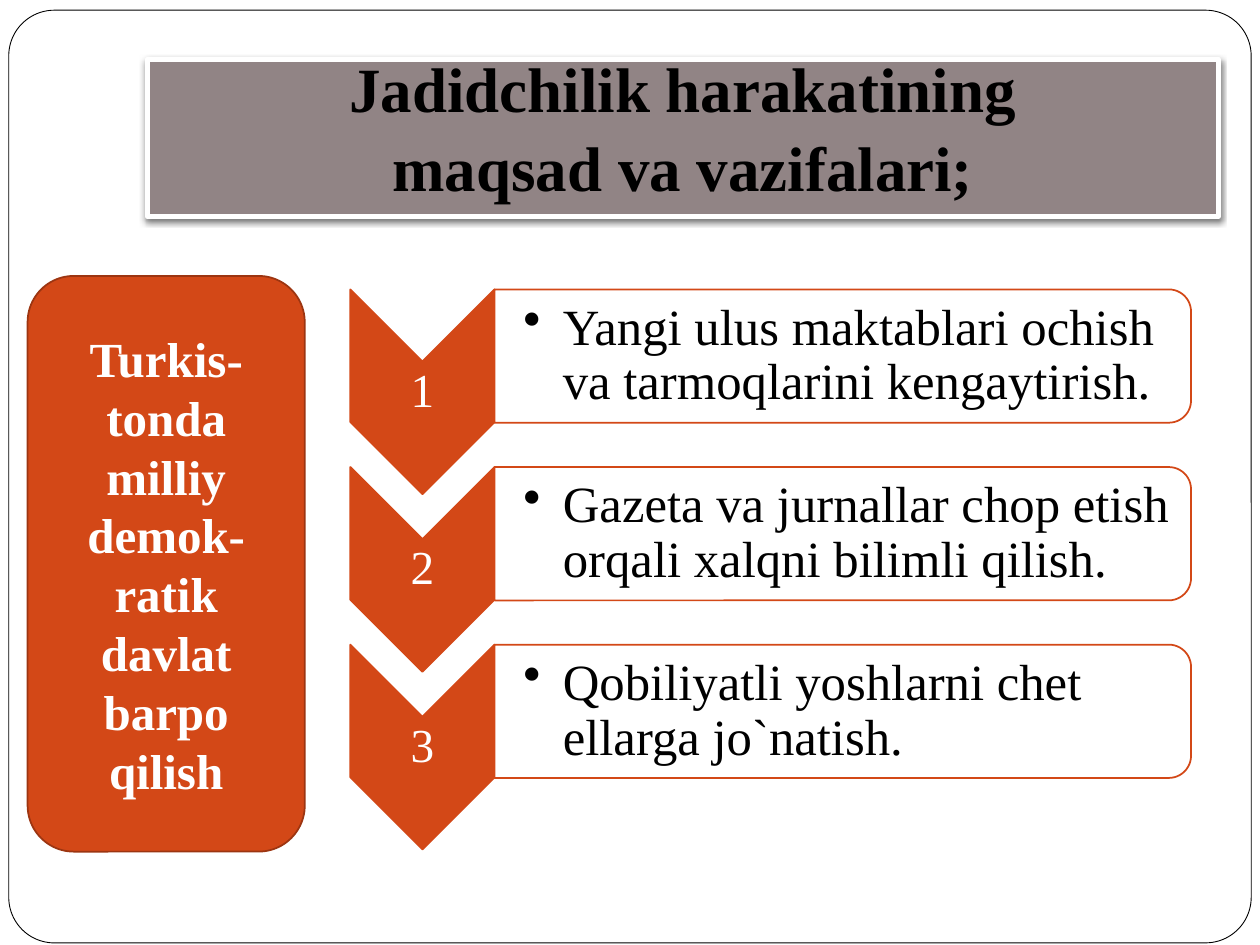
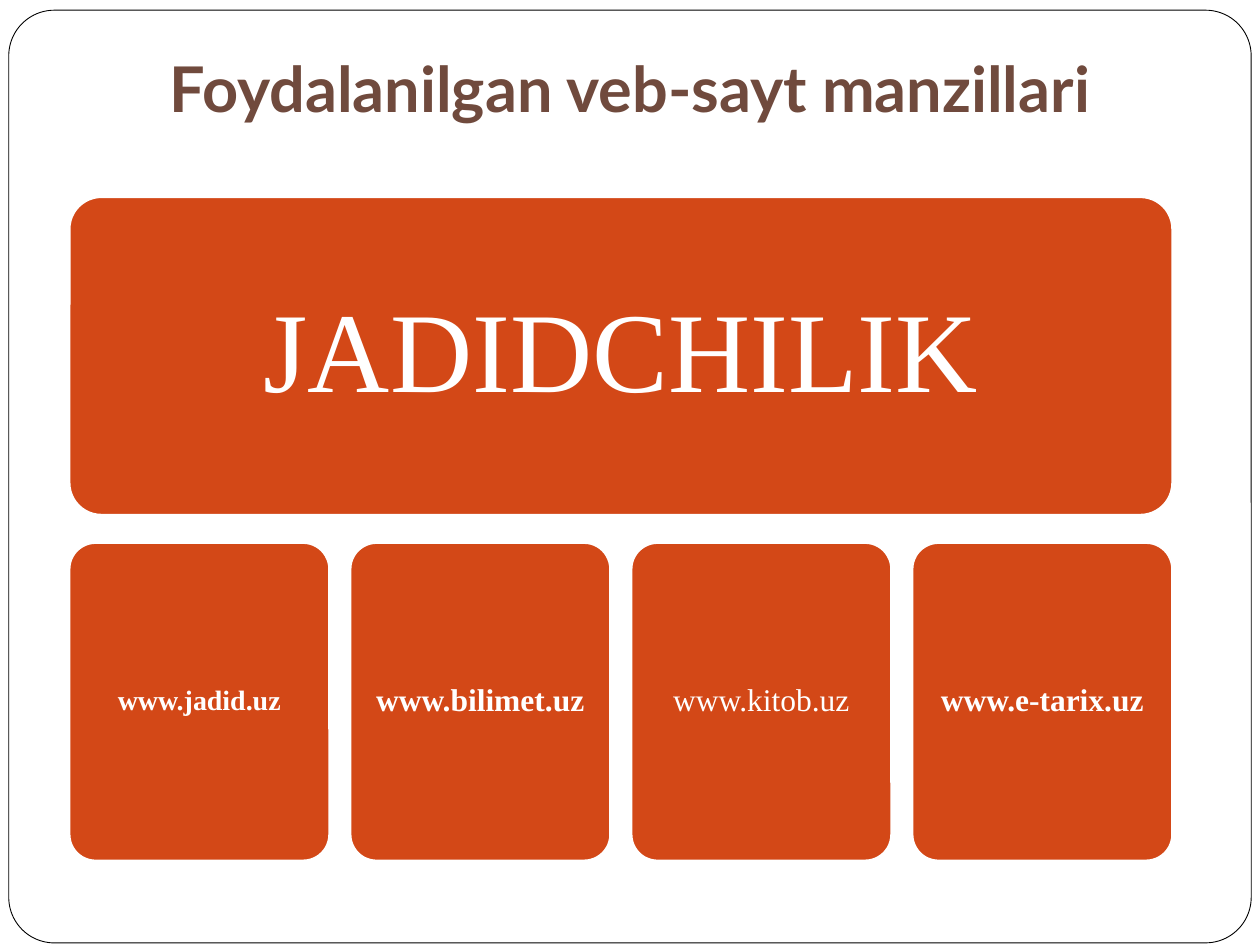
from lxml import etree
from pptx import Presentation
from pptx.dml.color import RGBColor
from pptx.enum import shapes, text
from pptx.oxml import ns
from pptx.util import Pt

# Content
GOALS_TITLE = "Jadidchilik harakatining\vmaqsad va vazifalari;"
MAIN_GOAL = "Turkis-tonda milliy demok-ratik davlat barpo qilish"
TASKS = [
    "Yangi ulus maktablari ochish va tarmoqlarini kengaytirish.",
    "Gazeta va jurnallar chop etish orqali xalqni bilimli qilish.",
    "Qobiliyatli yoshlarni chet ellarga jo`natish.",
]
SITES_TITLE = "Foydalanilgan veb-sayt manzillari"
TOPIC = "JADIDCHILIK"
SITES = [  # address, size, bold
    ("www.jadid.uz", 16, True),
    ("www.bilimet.uz", 18, True),
    ("www.kitob.uz", 18, False),
    ("www.e-tarix.uz", 18, True),
]

# Shared style
ORANGE = RGBColor(0xD3, 0x48, 0x17)
RUST = RGBColor(0x9C, 0x35, 0x11)
BROWN = RGBColor(0x70, 0x4A, 0x3D)
MAUVE = RGBColor(0x91, 0x84, 0x85)
WHITE = RGBColor(255, 255, 255)
BLACK = RGBColor(0, 0, 0)
SERIF, SANS = "Times New Roman", "Lato"
SHAPE, ALIGN, ANCHOR = shapes.MSO_SHAPE, text.PP_ALIGN, text.MSO_ANCHOR


def paint(shape, fill, line, width=1):
    shape.fill.solid()
    shape.fill.fore_color.rgb = fill
    shape.line.color.rgb = line
    shape.line.width = Pt(width)


def add_box(slide, kind, box, fill, line, width=1, corner=None):
    shape = slide.shapes.add_shape(kind, *map(Pt, box))
    shape.shadow.inherit = False
    paint(shape, fill, line, width)
    if corner is not None:
        shape.adjustments[0] = corner
    return shape


def add_turned(slide, kind, box, fill):
    """Add a shape turned a quarter clockwise that fills the given box."""
    left, top, width, height = box
    shift = (width - height) / 2
    turned = add_box(slide, kind, (left + shift, top - shift, height, width), fill, ORANGE)
    turned.rotation = 90


def write(shape, words, size, color, bold=False, font=SERIF, align=ALIGN.CENTER,
          anchor=ANCHOR.MIDDLE, spacing=0.9, margins=(1.5, 1.5, 1.5, 1.5)):
    frame = shape.text_frame
    frame.word_wrap = True
    frame.auto_size = text.MSO_AUTO_SIZE.NONE
    frame.vertical_anchor = anchor
    (frame.margin_left, frame.margin_top,
     frame.margin_right, frame.margin_bottom) = map(Pt, margins)
    frame.text = words
    paragraph = frame.paragraphs[0]
    paragraph.alignment = align
    paragraph.line_spacing = spacing
    style = paragraph.font
    style.name, style.size, style.bold = font, Pt(size), bold
    style.color.rgb = color
    return paragraph


def add_bullet(paragraph, indent):
    properties = paragraph._p.get_or_add_pPr()
    properties.set("marL", str(Pt(indent)))
    properties.set("indent", str(-Pt(indent)))
    bullet = etree.Element(ns.qn("a:buChar"), char="•")
    properties.find(ns.qn("a:defRPr")).addprevious(bullet)


def add_drop_shadow(shape, blur, distance, opacity):
    shape.shadow.inherit = False
    effects = shape._element.spPr.find(ns.qn("a:effectLst"))
    shadow = etree.SubElement(effects, ns.qn("a:outerShdw"), blurRad=str(Pt(blur)),
                              dist=str(Pt(distance)), dir="5400000", rotWithShape="0")
    color = etree.SubElement(shadow, ns.qn("a:srgbClr"), val=str(BLACK))
    etree.SubElement(color, ns.qn("a:alpha"), val=str(opacity * 1000))


def set_title(slide, words, box, color, font, spacing):
    title = slide.shapes.title
    title.left, title.top, title.width, title.height = map(Pt, box)
    write(title, words, 36, color, True, font, anchor=ANCHOR.BOTTOM,
          spacing=spacing, margins=(7.2, 3.6, 7.2, 7.2))
    return title


def add_page_frame(slide):
    """Draw the rounded page frame once, on the layout that the slides share."""
    frame = add_box(slide, SHAPE.ROUNDED_RECTANGLE, (5, 5.8, 710, 533),
                    WHITE, BLACK, 0.5, 0.049)
    slide.slide_layout.shapes.element.insert(2, frame._element)


def build_goals(slide):
    banner = set_title(slide, GOALS_TITLE, (84.2, 33.8, 612, 90), BLACK, SERIF, 1.05)
    paint(banner, MAUVE, WHITE, 3)
    add_drop_shadow(banner, 3, 2, 50)

    # Main goal panel
    panel = add_box(slide, SHAPE.ROUNDED_RECTANGLE, (15.8, 157.7, 158.4, 329), ORANGE, RUST)
    write(panel, MAIN_GOAL, 28, WHITE, True, spacing=1, margins=(7.2, 3.6, 7.2, 3.6))

    # Numbered tasks
    left, top, step = 200.2, 165.4, 101.5
    arrow_width, arrow_height, card_width, card_height = 82.4, 117, 398, 76.2
    for index, task in enumerate(TASKS):
        y = top + index * step
        arrow = (left, y, arrow_width, arrow_height)
        card = (left + arrow_width, y, card_width, card_height)
        add_turned(slide, SHAPE.CHEVRON, arrow, ORANGE)
        number = slide.shapes.add_textbox(*map(Pt, arrow))
        write(number, str(index + 1), 27, WHITE)
        add_turned(slide, SHAPE.ROUND_2_SAME_RECTANGLE, card, WHITE)
        label = slide.shapes.add_textbox(*map(Pt, card))
        line = write(label, task, 29, BLACK, align=ALIGN.LEFT, margins=(16.5, 1.5, 5, 1.5))
        add_bullet(line, 22.5)


def build_sites(slide):
    set_title(slide, SITES_TITLE, (36, 21.6, 648, 57), BROWN, SANS, 1)

    # Topic above a row of equal site cards
    left, top, width, height = 39.8, 112.7, 630, 181.4
    card_width, row_top = 148.3, 310.3
    topic = add_box(slide, SHAPE.ROUNDED_RECTANGLE, (left, top, width, height),
                    ORANGE, WHITE, corner=0.1)
    write(topic, TOPIC, 65, WHITE, margins=(19.5,) * 4)
    step = (width - card_width) / (len(SITES) - 1)
    for index, (address, size, bold) in enumerate(SITES):
        card = add_box(slide, SHAPE.ROUNDED_RECTANGLE,
                       (left + index * step, row_top, card_width, height),
                       ORANGE, WHITE, corner=0.1)
        write(card, address, size, WHITE, bold, margins=(5,) * 4)


def main():
    deck = Presentation()
    deck.slide_width, deck.slide_height = Pt(720), Pt(540)
    title_only = deck.slide_layouts[5]
    goals, sites = (deck.slides.add_slide(title_only) for _ in range(2))
    add_page_frame(goals)
    build_goals(goals)
    build_sites(sites)
    deck.save("out.pptx")


if __name__ == "__main__":
    main()
